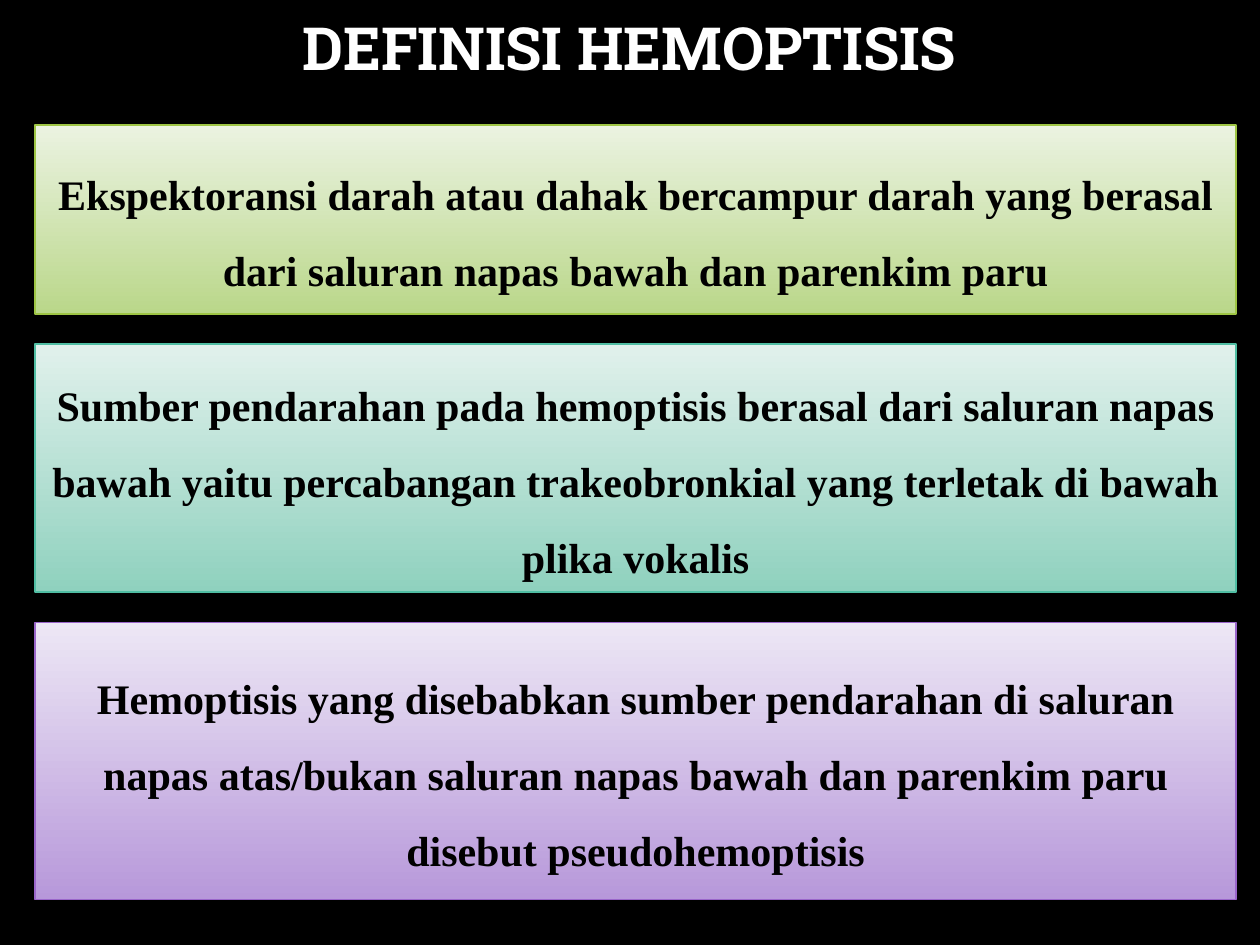
from dataclasses import dataclass

from pptx import Presentation
from pptx.dml.color import RGBColor
from pptx.enum.shapes import MSO_SHAPE
from pptx.enum.text import MSO_ANCHOR, MSO_AUTO_SIZE, PP_ALIGN
from pptx.slide import Slide
from pptx.text.text import TextFrame
from pptx.util import Inches, Pt

BLACK = RGBColor(0x00, 0x00, 0x00)
WHITE = RGBColor(0xFF, 0xFF, 0xFF)
PALE_GREEN = RGBColor(0xEB, 0xF3, 0xE1)
GREEN = RGBColor(0xBA, 0xD7, 0x8A)
GREEN_EDGE = RGBColor(0x9E, 0xC5, 0x44)
PALE_TEAL = RGBColor(0xE1, 0xF1, 0xEC)
TEAL = RGBColor(0x8F, 0xD1, 0xBE)
TEAL_EDGE = RGBColor(0x50, 0xBE, 0xA3)
PALE_PURPLE = RGBColor(0xED, 0xE7, 0xF5)
PURPLE = RGBColor(0xB7, 0x98, 0xDA)
PURPLE_EDGE = RGBColor(0x9A, 0x66, 0xCA)

PANEL_LEFT = 0.28
PANEL_WIDTH = 9.53
FIRST_PANEL_TOP = 0.99
PANEL_GAP = 0.24


@dataclass(frozen=True)
class Panel:
    statement: str
    height: float
    upper: RGBColor
    lower: RGBColor
    edge: RGBColor


PANELS = [
    Panel(
        "Ekspektoransi darah atau dahak bercampur darah yang berasal "
        "dari saluran napas bawah dan parenkim paru",
        1.5, PALE_GREEN, GREEN, GREEN_EDGE,
    ),
    Panel(
        "Sumber pendarahan pada hemoptisis berasal dari saluran napas "
        "bawah yaitu percabangan trakeobronkial yang terletak di bawah "
        "plika vokalis",
        1.97, PALE_TEAL, TEAL, TEAL_EDGE,
    ),
    Panel(
        "Hemoptisis yang disebabkan sumber pendarahan di saluran "
        "napas atas/bukan saluran napas bawah dan parenkim paru "
        "disebut pseudohemoptisis",
        2.2, PALE_PURPLE, PURPLE, PURPLE_EDGE,
    ),
]


def write_text(frame: TextFrame, text: str, *, font: str, size: float,
               color: RGBColor, spacing: float) -> None:
    frame.word_wrap = True
    frame.auto_size = MSO_AUTO_SIZE.NONE
    frame.vertical_anchor = MSO_ANCHOR.MIDDLE
    paragraph = frame.paragraphs[0]
    paragraph.alignment = PP_ALIGN.CENTER
    paragraph.line_spacing = spacing
    run = paragraph.add_run()
    run.text = text
    run.font.name = font
    run.font.size = Pt(size)
    run.font.bold = True
    run.font.color.rgb = color


def add_title(slide: Slide, text: str) -> None:
    title = slide.shapes.title
    title.left, title.top = Inches(0.75), Inches(0.05)
    title.width, title.height = Inches(8.49), Inches(0.72)
    write_text(title.text_frame, text, font="Roboto Slab", size=34,
               color=WHITE, spacing=0.9)


def add_panel(slide: Slide, panel: Panel, top: float) -> None:
    box = slide.shapes.add_shape(
        MSO_SHAPE.RECTANGLE, Inches(PANEL_LEFT), Inches(top),
        Inches(PANEL_WIDTH), Inches(panel.height),
    )
    box.shadow.inherit = False
    box.fill.gradient()
    box.fill.gradient_angle = 270
    for stop, color in zip(box.fill.gradient_stops, (panel.upper, panel.lower)):
        stop.color.rgb = color
    box.line.color.rgb = panel.edge
    box.line.width = Pt(1)
    write_text(box.text_frame, panel.statement, font="Times New Roman",
               size=24, color=BLACK, spacing=1.5)


def main() -> None:
    presentation = Presentation()
    presentation.slide_width = Inches(10)
    presentation.slide_height = Inches(7.5)
    slide = presentation.slides.add_slide(presentation.slide_layouts[5])
    slide.background.fill.solid()
    slide.background.fill.fore_color.rgb = BLACK

    add_title(slide, "DEFINISI HEMOPTISIS")
    top = FIRST_PANEL_TOP
    for panel in PANELS:
        add_panel(slide, panel, top)
        top += panel.height + PANEL_GAP

    presentation.save("out.pptx")


if __name__ == "__main__":
    main()
